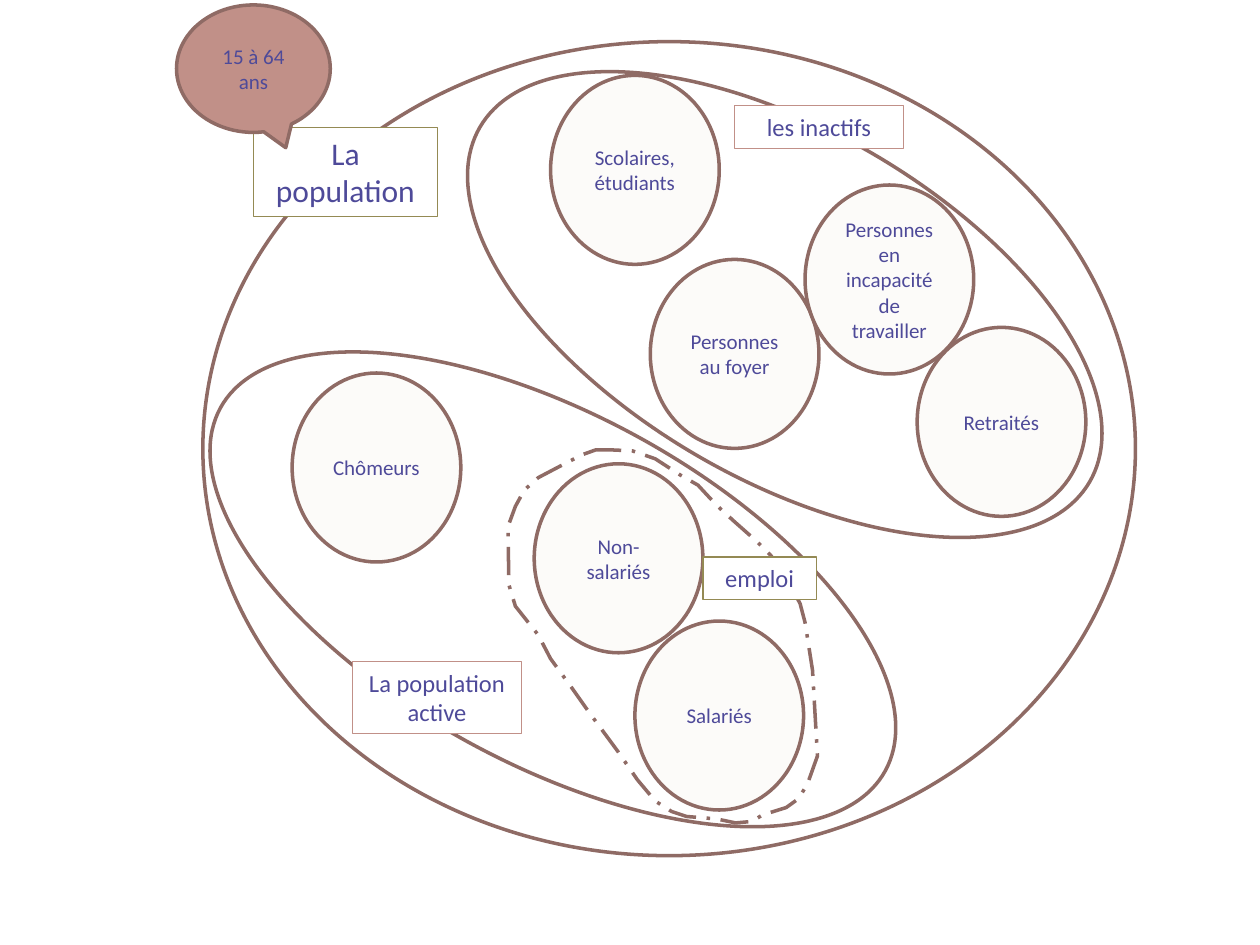
from pptx import Presentation
from pptx.dml.color import RGBColor
from pptx.enum.dml import MSO_LINE as Dash
from pptx.enum.shapes import MSO_SHAPE as Kind
from pptx.enum.text import MSO_ANCHOR as Anchor, MSO_AUTO_SIZE as Fit, PP_ALIGN as Align
from pptx.util import Cm, Pt

INK, BROWN, ROSE, OLIVE = "4E4A99", "8F6B65", "C19088", "948A54"
CREAM, WHITE = "FCFBF9", "FFFFFF"

WHOLE = (4.09, 0.84, 18.8, 16.41)
ACTIVE = (3.51, 8.36, 15.27, 7.04)
IDLE = (8.71, 2.62, 14.22, 7.04)
AGES = (3.56, 0.1, 3.1, 2.57)
DISC = (3.4, 3.81)

PEOPLE = [
    ("Scolaires, étudiants", 11.1, 1.52),
    ("Personnes au foyer", 13.11, 5.23),
    ("Retraités", 18.49, 6.6),
    ("Chômeurs", 5.89, 7.52),
    ("Salariés", 12.8, 12.52),
    ("Non-salariés", 10.77, 9.35),
]
UNABLE = ("Personnes en incapacité de travailler", 16.23, 3.73)

JOBS = [
    (12.32, 9.07), (12.01, 9.07), (11.73, 9.17), (11.25, 9.42), (10.85, 9.63),
    (10.57, 9.88), (10.39, 10.21), (10.24, 10.62), (10.26, 11.79), (10.39, 12.22),
    (10.85, 12.8), (11.1, 13.28), (11.53, 13.87), (11.89, 14.38), (12.45, 15.14),
    (12.85, 15.72), (13.21, 16.15), (13.54, 16.36), (13.84, 16.46), (14.45, 16.51),
    (14.83, 16.59), (15.16, 16.56), (15.37, 16.43), (15.85, 16.28), (16.1, 16.1),
    (16.28, 15.8), (16.48, 15.24), (16.38, 13.51), (16.23, 12.55), (16.13, 12.17),
    (15.85, 11.63), (15.54, 11.2), (15.24, 10.9), (14.81, 10.52), (14.45, 10.19),
    (14.07, 9.78), (13.72, 9.58), (13.21, 9.25), (12.75, 9.09),
]


def tint(code):
    return RGBColor.from_string(code)


def paint(shape, fill, line, width):
    shape.shadow.inherit = False
    if fill:
        shape.fill.solid()
        shape.fill.fore_color.rgb = tint(fill)
    else:
        shape.fill.background()
    shape.line.color.rgb = tint(line)
    shape.line.width = Pt(width)


def draw(home, kind, box, fill=None, line=BROWN, width=2, turn=0):
    shape = home.add_shape(kind, *map(Cm, box))
    shape.rotation = turn
    paint(shape, fill, line, width)
    return shape


def write(shape, text, size, anchor=Anchor.MIDDLE):
    frame = shape.text_frame
    frame.word_wrap = True
    frame.vertical_anchor = anchor
    para = frame.paragraphs[0]
    para.alignment = Align.CENTER
    run = para.add_run()
    run.text = text
    run.font.name = "Calibri"
    run.font.size = Pt(size)
    run.font.color.rgb = tint(INK)


def label(home, text, box, line, size=14):
    shape = draw(home, Kind.RECTANGLE, box, WHITE, line, 0.75)
    write(shape, text, size, Anchor.TOP)
    shape.text_frame.auto_size = Fit.SHAPE_TO_FIT_TEXT


def disc(home, text, left, top):
    write(draw(home, Kind.OVAL, (left, top, *DISC), CREAM), text, 12)


def main():
    deck = Presentation()
    deck.slide_width, deck.slide_height = Cm(25.4), Cm(19.05)
    page = deck.slides.add_slide(deck.slide_layouts[6]).shapes

    total = page.add_group_shape().shapes
    draw(total, Kind.OVAL, WHOLE)
    label(total, "La population", (5.11, 2.57, 3.71, 1.8), OLIVE, 18)

    for person in PEOPLE:
        disc(page, *person)
    draw(page, Kind.OVAL, ACTIVE, turn=208.6)
    draw(page, Kind.OVAL, IDLE, turn=30.2)
    label(page, "La population active", (7.11, 13.34, 3.4, 1.45), ROSE)
    disc(page, *UNABLE)
    label(page, "les inactifs", (14.81, 2.13, 3.4, 0.86), ROSE)

    work = page.add_group_shape().shapes
    dots = [(Cm(x), Cm(y)) for x, y in JOBS]
    pen = work.build_freeform(*dots[0])
    pen.add_line_segments(dots[1:], close=True)
    loop = pen.convert_to_shape()
    paint(loop, None, BROWN, 2)
    loop.line.dash_style = Dash.LONG_DASH_DOT
    label(work, "emploi", (14.17, 11.23, 2.29, 0.86), OLIVE)

    ages = draw(page, Kind.OVAL_CALLOUT, AGES, ROSE)
    ages.adjustments[0], ages.adjustments[1] = 0.21, 0.62
    write(ages, "15 à 64 ans", 12)

    deck.save("out.pptx")


if __name__ == "__main__":
    main()
